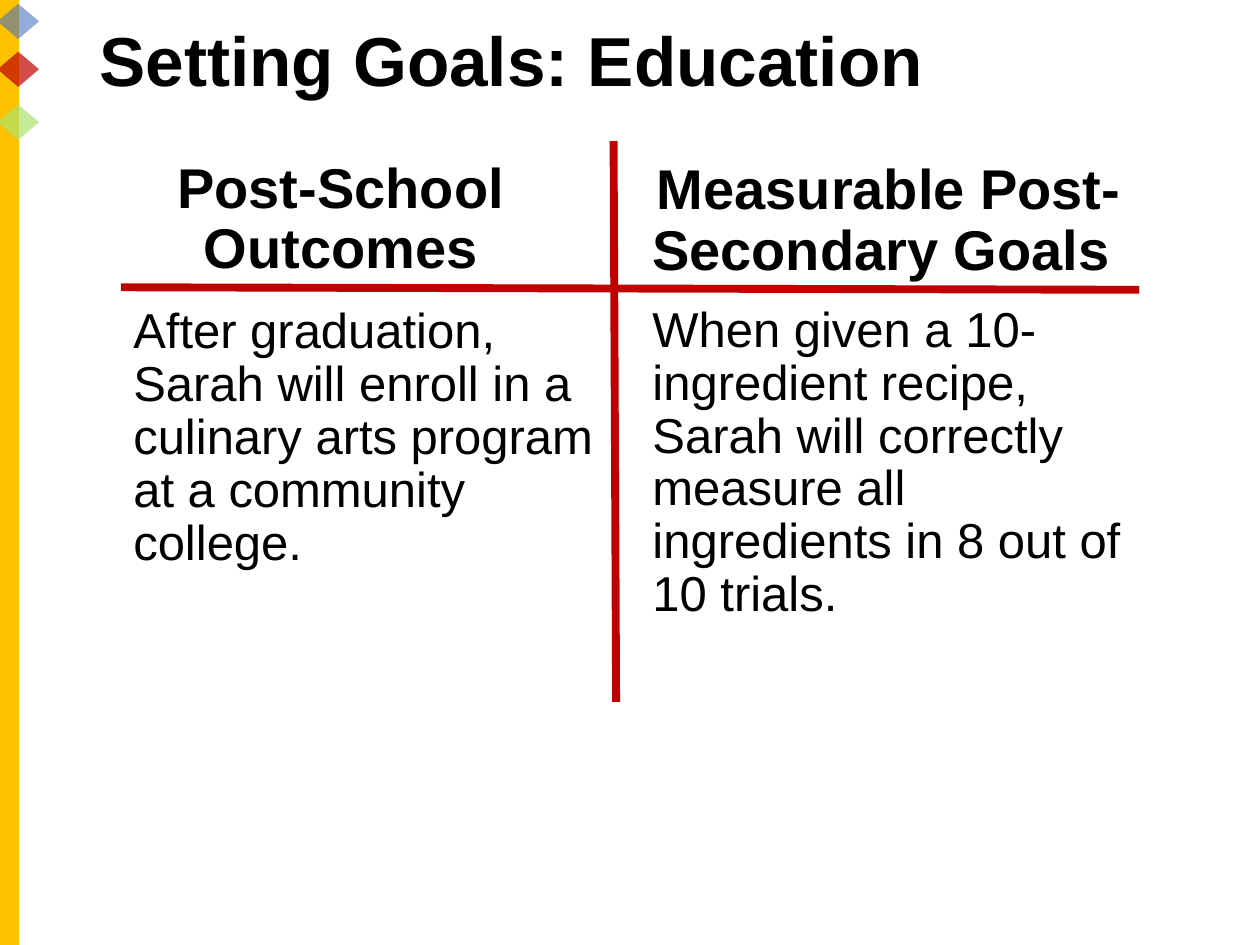
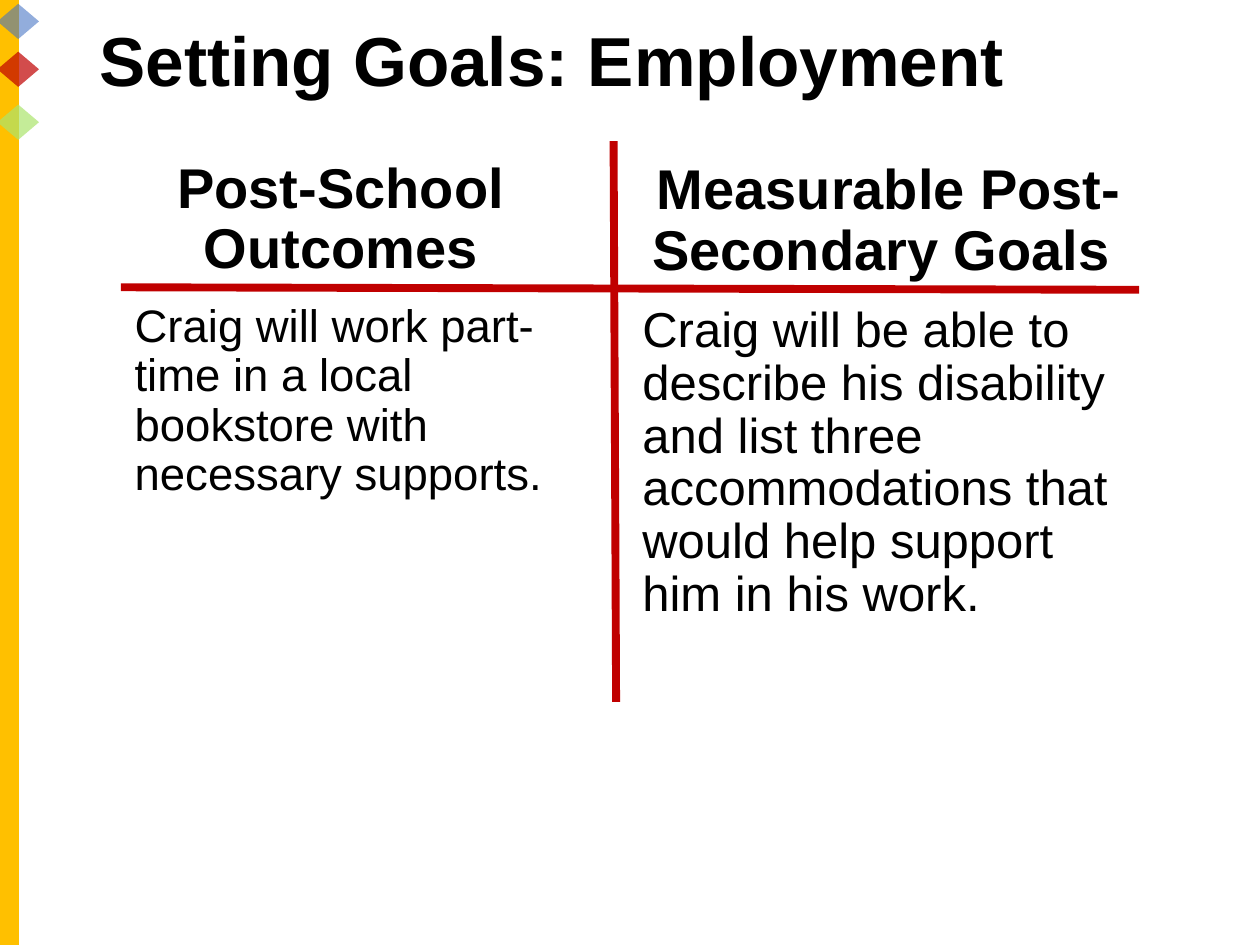
from pptx import Presentation
from pptx.dml.color import RGBColor as RGB
from pptx.enum.shapes import MSO_CONNECTOR as Link, MSO_SHAPE as Kind
from pptx.enum.text import MSO_ANCHOR as Anchor, MSO_AUTO_SIZE as Auto, PP_ALIGN as Align
from pptx.oxml.ns import qn
from pptx.util import Inches, Pt
from lxml.etree import SubElement

# Content: title, then (text, size, box) for the outcome and the goal
SLIDES = [
    ("Setting Goals: Education",
     [("After graduation, Sarah will enroll in a culinary arts program at a "
       "community college.", 28, (0.96, 2.38, 3.92, 4.02)),
      ("When given a 10-ingredient recipe, Sarah will correctly measure all "
       "ingredients in 8 out of 10 trials.", 28, (5.08, 2.37, 3.96, 4.03))]),
    ("Setting Goals: Employment",
     [("Craig will work part-time in a local bookstore with necessary supports.",
       26, (0.97, 2.36, 3.88, 4.02)),
      ("Craig will be able to describe his disability and list three "
       "accommodations that would help support him in his work.",
       28, (5, 2.37, 4.11, 4.03))]),
]
HEADS = [("Post-School Outcomes", (0.56, 1.15, 4.29, 1.2)),
         ("Measurable Post-Secondary Goals ", (4.91, 1.16, 4.29, 1.2))]

# Shared look
FONT = "Arial"
BLACK = RGB(0, 0, 0)
GOLD = RGB(0xFF, 0xC0, 0x00)
BLUE = RGB(0x44, 0x72, 0xC4)
RED = RGB(0xC0, 0x00, 0x00)
GREEN = RGB(0xAB, 0xE4, 0x6D)
WIDE, HIGH = 10, 7.5
TITLE = (0.69, 0.14, 8.62, 0.73)
GEMS = [(0.03, BLUE, 58), (0.41, RED, 70), (0.83, GREEN, 70)]  # top, colour, opacity
RULES = [(4.87, 1.12, 4.89, 5.57), (0.96, 2.28, 9.04, 2.3)]


def inch(box):
    return [Inches(n) for n in box]


def style(frame, text, size, bold=False, align=Align.LEFT, anchor=Anchor.TOP, gap=10):
    frame.word_wrap = True
    frame.auto_size = Auto.NONE
    frame.vertical_anchor = anchor
    frame.text = text
    para = frame.paragraphs[0]
    para.alignment = align
    para.line_spacing = 0.9
    para.space_before = Pt(gap)
    font = para.font
    font.name, font.size, font.bold = FONT, Pt(size), bold
    font.color.rgb = BLACK


def add_text(slide, text, size, box, **look):
    style(slide.shapes.add_textbox(*inch(box)).text_frame, text, size, **look)


def add_fill(slide, kind, box, color, alpha=100):
    shape = slide.shapes.add_shape(kind, *inch(box))
    shape.shadow.inherit = False
    shape.fill.solid()
    shape.fill.fore_color.rgb = color
    shape.line.fill.background()
    if alpha < 100:
        tint = shape.fill._xPr.find(qn("a:solidFill"))[0]
        SubElement(tint, qn("a:alpha")).set("val", str(alpha * 1000))


def add_rule(slide, ends):
    rule = slide.shapes.add_connector(Link.STRAIGHT, *inch(ends))
    rule.line.color.rgb = RED
    rule.line.width = Pt(4.5)
    SubElement(rule._element.spPr, qn("a:effectLst"))


def add_slide(deck, title, goals):
    slide = deck.slides.add_slide(deck.slide_layouts[5])

    # Side band with diamonds
    add_fill(slide, Kind.RECTANGLE, (0, 0, 0.15, HIGH), GOLD)
    for top, color, alpha in GEMS:
        add_fill(slide, Kind.DIAMOND, (-0.02, top, 0.33, 0.28), color, alpha)

    # Title
    head = slide.shapes.title
    head.left, head.top, head.width, head.height = inch(TITLE)
    style(head.text_frame, title, 39.6, bold=True, anchor=Anchor.MIDDLE, gap=0)

    # Two columns and the cross between them
    for text, box in HEADS:
        add_text(slide, text, 32, box, bold=True, align=Align.CENTER,
                 anchor=Anchor.MIDDLE)
    for text, size, box in goals:
        add_text(slide, text, size, box)
    for ends in RULES:
        add_rule(slide, ends)


def main():
    deck = Presentation()
    deck.slide_width, deck.slide_height = inch((WIDE, HIGH))
    for title, goals in SLIDES:
        add_slide(deck, title, goals)
    deck.save("out.pptx")


if __name__ == "__main__":
    main()
